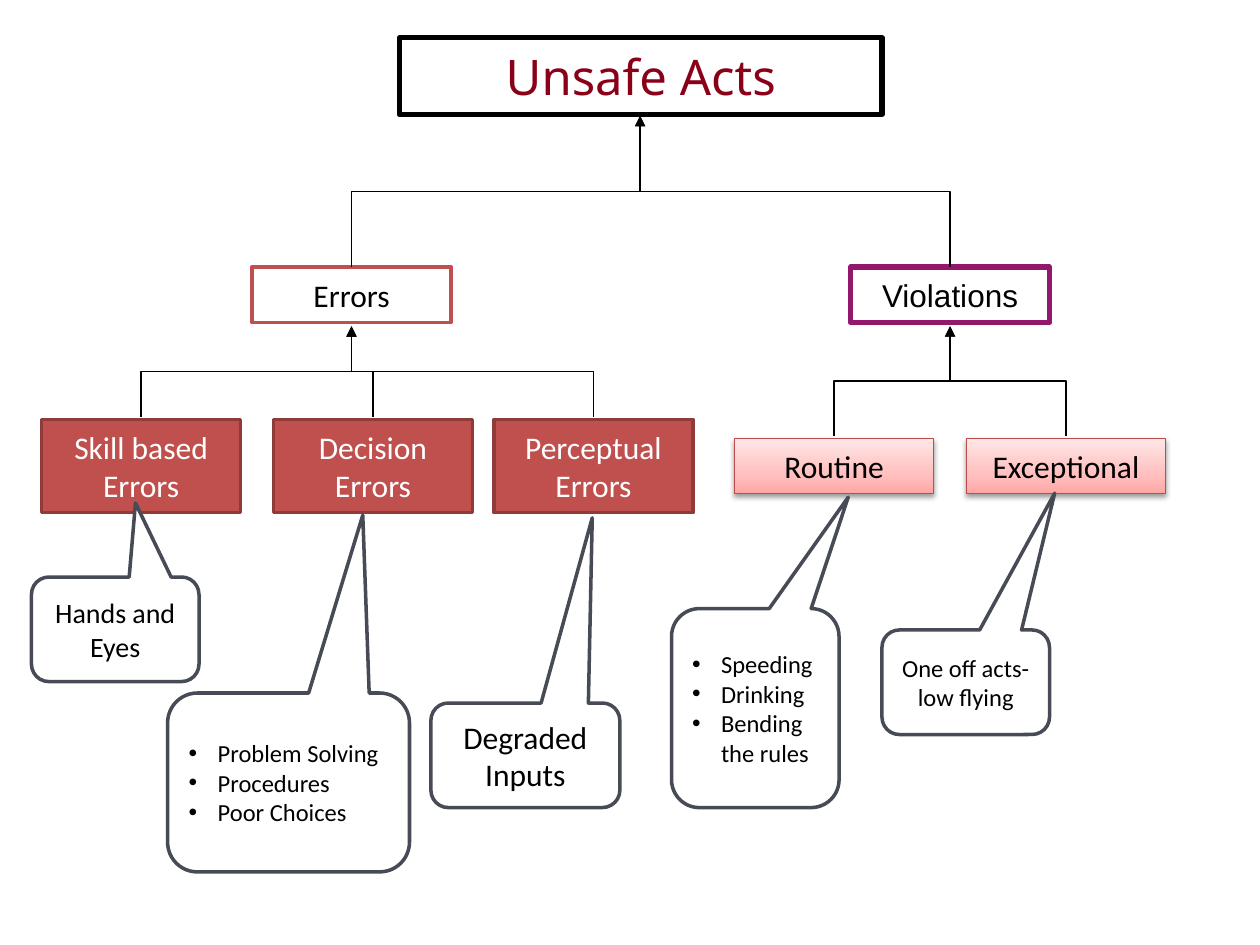
"""Build the Unsafe Acts tree of errors and violations as one slide."""
from lxml import etree
from pptx import Presentation
from pptx import util as u
from pptx.dml import color
from pptx.enum import shapes, text
from pptx.oxml import ns

INK = {"black": "000000", "white": "FFFFFF", "title": "890018", "red": "C0504D",
       "edge": "8E3B39", "plum": "93176C", "slate": "474B55", "rose": "BF4C48"}
FADE = [(0, "FFA6A5"), (35, "FFC0BF"), (100, "FFE7E7")]


def write(shape, words, size=18, font="Calibri", ink="black", bullet=False):
    frame = shape.text_frame
    frame.word_wrap = True
    frame.vertical_anchor = text.MSO_ANCHOR.MIDDLE
    frame.text = words
    for para in frame.paragraphs:
        para.alignment = text.PP_ALIGN.LEFT if bullet else text.PP_ALIGN.CENTER
        if bullet:
            props = para._p.get_or_add_pPr()
            props.set("marL", str(u.Inches(0.23)))
            props.set("indent", str(-u.Inches(0.23)))
            add(props, "a:buFont", typeface="Arial")
            add(props, "a:buChar", char="•")
        para.font.size = u.Pt(size)
        para.font.name = font
        para.font.color.rgb = color.RGBColor.from_string(INK[ink])


def add(node, tag, **attrs):
    return etree.SubElement(node, ns.qn(tag), {k: str(v) for k, v in attrs.items()})


deck = Presentation()
deck.slide_width, deck.slide_height = u.Inches(10), u.Inches(7.5)
slide = deck.slides.add_slide(deck.slide_layouts[5])

title = slide.shapes.title
title.left, title.top = u.Inches(3.17), u.Inches(0.3)
title.width, title.height = u.Inches(3.83), u.Inches(0.61)
title.line.color.rgb = color.RGBColor.from_string(INK["black"])
title.line.width = u.Pt(3)
write(title, "Unsafe Acts", size=28, font="Noto Sans", ink="title")

boxes = [
    ("Errors", 2, 2.12, 0.44, "white", "red", 2, "Calibri", "black"),
    ("Violations", 6.75, 2.12, 0.44, None, "plum", 3, "Arial", "black"),
    ("Skill based Errors", 0.33, 3.33, 0.74, "red", "edge", 2, "Calibri", "white"),
    ("Decision Errors", 2.17, 3.33, 0.74, "red", "edge", 2, "Calibri", "white"),
    ("Perceptual Errors", 3.92, 3.33, 0.74, "red", "edge", 2, "Calibri", "white"),
    ("Routine", 5.83, 3.48, 0.44, "fade", "rose", 0.75, "Calibri", "black"),
    ("Exceptional", 7.67, 3.48, 0.44, "fade", "rose", 0.75, "Calibri", "black"),
]
for words, left, top, high, fill, edge, thick, font, ink in boxes:
    box = slide.shapes.add_shape(
        shapes.MSO_SHAPE.RECTANGLE, u.Inches(left), u.Inches(top),
        u.Inches(1.58), u.Inches(high))
    box.shadow.inherit = False
    box.line.color.rgb = color.RGBColor.from_string(INK[edge])
    box.line.width = u.Pt(thick)
    if fill == "fade":
        box.fill.gradient()
        box.fill.gradient_angle = 90
        props = box._element.spPr
        stops = props.find(".//" + ns.qn("a:gsLst"))
        for stop in list(stops):
            stops.remove(stop)
        for place, tone in FADE:
            add(add(stops, "a:gs", pos=place * 1000), "a:srgbClr", val=tone)
        shade = add(props.find(ns.qn("a:effectLst")), "a:outerShdw",
                    blurRad=u.Pt(3.1), dist=u.Pt(1.6), dir=5400000, rotWithShape=0)
        add(add(shade, "a:srgbClr", val=INK["black"]), "a:alpha", val=38000)
    elif fill:
        box.fill.solid()
        box.fill.fore_color.rgb = color.RGBColor.from_string(INK[fill])
    else:
        box.fill.background()
    write(box, words, font=font, ink=ink)

links = [
    (1.12, 3.31, 2.79, 2.59), (2.96, 3.31, 2.79, 2.59), (4.71, 3.31, 2.79, 2.59),
    (6.62, 3.46, 7.54, 2.59), (8.46, 3.46, 7.54, 2.59),
    (7.54, 2.12, 5.08, 0.92), (2.79, 2.12, 5.08, 0.92),
]
for x1, y1, x2, y2 in links:
    midx, midy = (x1 + x2) / 2, (y1 + y2) / 2
    rise, run = (y1 - y2) / 2, (x2 - x1) / 2
    link = slide.shapes.add_connector(
        shapes.MSO_CONNECTOR.ELBOW, u.Inches(midx - rise), u.Inches(midy - run),
        u.Inches(midx + rise), u.Inches(midy + run))
    link.line.color.rgb = color.RGBColor.from_string(INK["black"])
    link.line.width = u.Pt(0.75)
    props = link._element.spPr
    props.find(ns.qn("a:xfrm")).set("rot", "16200000")
    add(props.find(ns.qn("a:ln")), "a:tailEnd", type="triangle")
    add(props, "a:effectLst")

notes = [
    ("Hands and Eyes", 0.25, 4.58, 1.33, 0.83, 0.121, -1.208, 16, False),
    ("Problem Solving\nProcedures\nPoor Choices",
     1.33, 5.5, 1.92, 1.42, 0.307, -1.494, 14, True),
    ("Degraded Inputs", 3.42, 5.58, 1.5, 0.83, 0.354, -2.271, 18, False),
    ("Speeding\nDrinking\nBending the rules",
     5.33, 4.83, 1.33, 1.58, 0.555, -1.06, 14, True),
    ("One off acts- low flying", 7, 5, 1.33, 0.83, 0.531, -1.808, 14, False),
]
for words, left, top, wide, high, tipx, tipy, size, bullet in notes:
    note = slide.shapes.add_shape(
        shapes.MSO_SHAPE.ROUNDED_RECTANGULAR_CALLOUT, u.Inches(left), u.Inches(top),
        u.Inches(wide), u.Inches(high))
    note.adjustments[0], note.adjustments[1] = tipx, tipy
    note.shadow.inherit = False
    note.fill.solid()
    note.fill.fore_color.rgb = color.RGBColor.from_string(INK["white"])
    note.line.color.rgb = color.RGBColor.from_string(INK["slate"])
    note.line.width = u.Pt(2)
    write(note, words, size=size, bullet=bullet)

deck.save("out.pptx")
